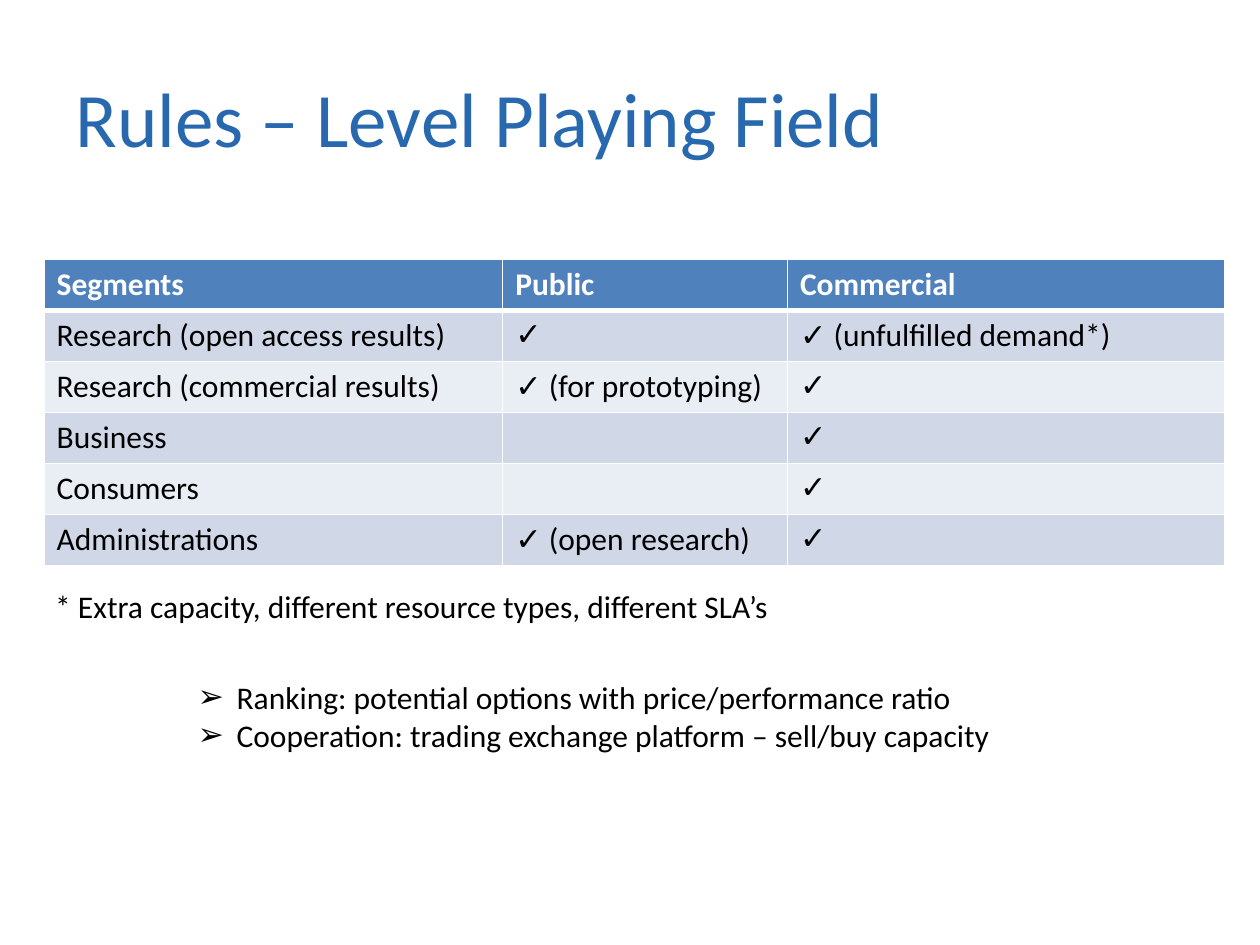
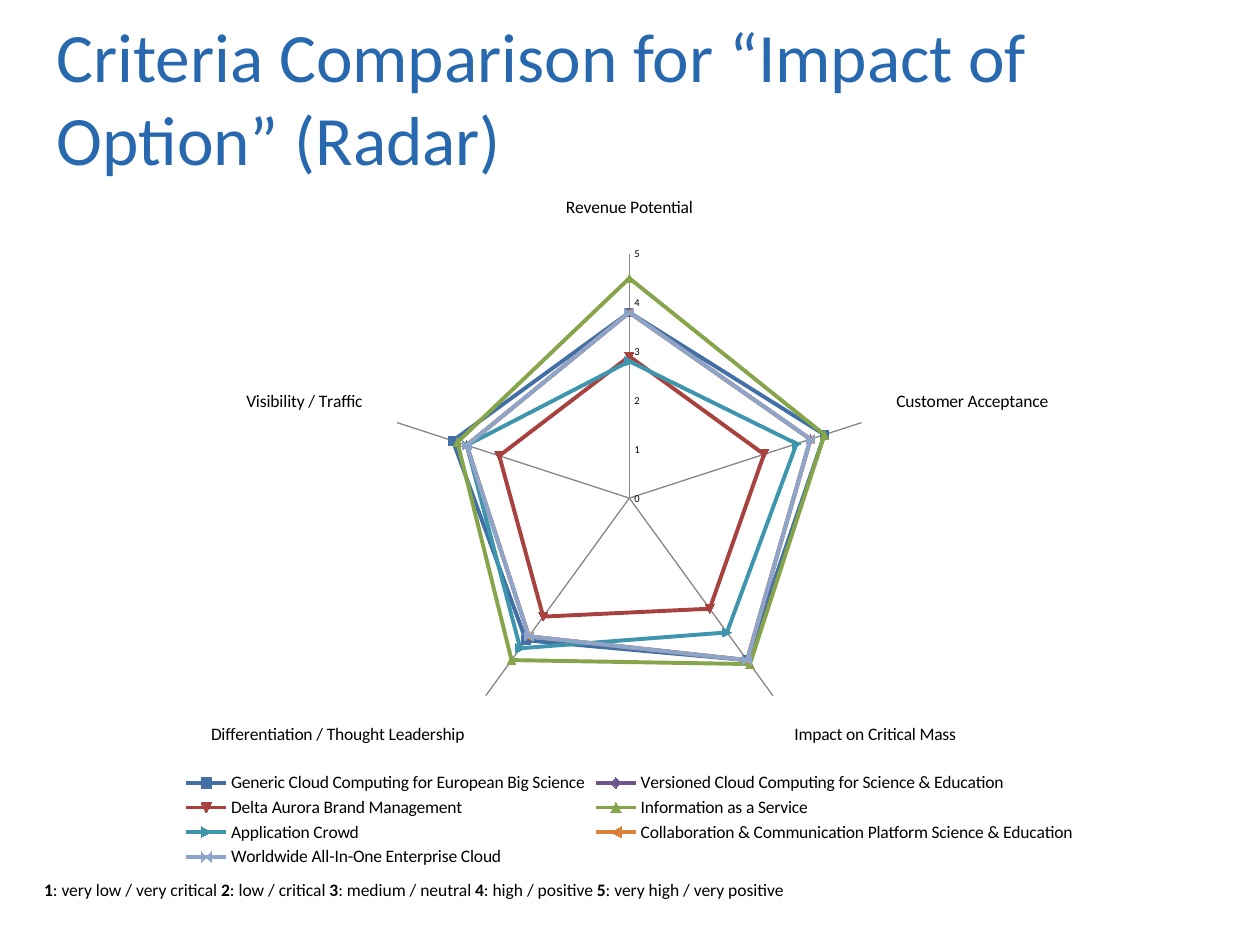
from lxml import etree
from pptx import Presentation
from pptx import util as u
from pptx.chart import data as cd
from pptx.dml import color as col
from pptx.enum import chart as ch
from pptx.enum import text as tx
from pptx.oxml import ns

FONT = "Calibri"
TICK = "✓"
HUES = {
    "title": "2768AE", "ink": "000000", "white": "FFFFFF", "head": "4F81BD",
    "odd": "D0D8E8", "even": "E9EDF4", "axis": "868686",
}
LINES = {
    "Generic Cloud Computing for European Big Science": ("416FA6", (3.8, 4.2, 4.1, 3.6, 3.8)),
    "Versioned Cloud Computing for Science & Education": ("6E548D", (3.8, 3.9, 4.1, 3.5, 3.5)),
    "Delta Aurora Brand Management": ("A8423F", (2.9, 2.9, 2.8, 3.0, 2.8)),
    "Information as a Service": ("86A44A", (4.5, 4.2, 4.2, 4.1, 3.7)),
    "Application Crowd": ("3D96AE", (2.8, 3.6, 3.4, 3.8, 3.5)),
    "Collaboration & Communication Platform Science & Education": ("DA8137", (3.8, 3.9, 4.1, 3.5, 3.5)),
    "Worldwide All-In-One Enterprise Cloud": ("8EA5CB", (3.8, 3.9, 4.1, 3.5, 3.5)),
}
AXES = ["Revenue Potential", "Customer Acceptance", "Impact on Critical Mass",
        "Differentiation / Thought Leadership", "Visibility / Traffic"]
ROWS = [
    ("Segments", "Public", "Commercial"),
    ("Research (open access results)", TICK, TICK + " (unfulfilled demand*)"),
    ("Research (commercial results)", TICK + " (for prototyping)", TICK),
    ("Business", "", TICK),
    ("Consumers", "", TICK),
    ("Administrations", TICK + " (open research)", TICK),
]
SCALE = ["very low / very critical ", "low / critical ", "medium / neutral ",
         "high / positive ", "very high / very positive"]


def rgb(hue):
    return col.RGBColor.from_string(HUES.get(hue, hue))


def style(font, size, hue="ink", bold=False, face=FONT):
    font.name, font.size, font.bold = face, u.Pt(size), bold
    font.color.rgb = rgb(hue)


def add_run(para, words, size, hue="ink", bold=False, face=FONT):
    run = para.add_run()
    run.text = words
    style(run.font, size, hue, bold, face)


def add_box(slide, area, wrap=True, anchor=tx.MSO_ANCHOR.TOP):
    frame = slide.shapes.add_textbox(*map(u.Inches, area)).text_frame
    frame.word_wrap = wrap
    frame.vertical_anchor = anchor
    if not wrap:
        frame.auto_size = tx.MSO_AUTO_SIZE.SHAPE_TO_FIT_TEXT
    return frame


def add_title(slide, words, area, size):
    frame = add_box(slide, area, anchor=tx.MSO_ANCHOR.MIDDLE)
    add_run(frame.paragraphs[0], words, size, "title")


def add_mark(para, sign, indent):
    props = para._p.get_or_add_pPr()
    props.set("marL", str(u.Inches(indent)))
    props.set("indent", str(-u.Inches(indent)))
    etree.SubElement(props, ns.qn("a:buFont"), typeface="Arial")
    etree.SubElement(props, ns.qn("a:buChar"), char=sign)


def add_edge(cell, side, width):
    line = etree.SubElement(cell._tc.get_or_add_tcPr(), ns.qn("a:ln" + side),
                            w=str(u.Pt(width)))
    fill = etree.SubElement(line, ns.qn("a:solidFill"))
    etree.SubElement(fill, ns.qn("a:srgbClr"), val=HUES["white"])


def fill_cell(cell, words, row):
    head = row == 0
    for side in "LRTB":
        thick = (head and side == "B") or (row == 1 and side == "T")
        add_edge(cell, side, 3 if thick else 1)
    cell.fill.solid()
    cell.fill.fore_color.rgb = rgb("head" if head else "odd" if row % 2 else "even")
    para = cell.text_frame.paragraphs[0]
    if words.startswith(TICK):
        add_run(para, TICK, 18, face="Arial")
        words = words[len(TICK):]
    if words:
        add_run(para, words, 18, "white" if head else "ink", head)


def add_grid(slide, rows, left, top, widths, height):
    area = (left, top, sum(widths), height * len(rows))
    table = slide.shapes.add_table(len(rows), len(widths), *map(u.Inches, area)).table
    for band, width in zip(table.columns, widths):
        band.width = u.Inches(width)
    for i, row in enumerate(rows):
        for j, words in enumerate(row):
            fill_cell(table.cell(i, j), words, i)


def add_radar(slide, area):
    data = cd.CategoryChartData(number_format="0.0")
    data.categories = AXES
    for name, (_, vals) in LINES.items():
        data.add_series(name, vals)
    chart = slide.shapes.add_chart(ch.XL_CHART_TYPE.RADAR_MARKERS,
                                   *map(u.Inches, area), data).chart
    style(chart.font, 18)
    chart.has_title = False
    chart.has_legend = True
    chart.legend.position = ch.XL_LEGEND_POSITION.BOTTOM
    chart.legend.include_in_layout = False
    style(chart.legend.font, 10)
    plot = chart.plots[0]
    plot.vary_by_categories = False
    for line, (hue, _) in zip(plot.series, LINES.values()):
        line.format.line.color.rgb = rgb(hue)
        line.format.line.width = u.Pt(2.25)
        mark = line.marker.format
        mark.fill.solid()
        mark.fill.fore_color.rgb = rgb(hue)
        mark.line.color.rgb = rgb(hue)
    for axis, size in ((chart.category_axis, 10), (chart.value_axis, 6)):
        style(axis.tick_labels.font, size)
        axis.major_tick_mark = axis.minor_tick_mark = ch.XL_TICK_MARK.NONE
        axis.format.line.color.rgb = rgb("axis")
    chart.category_axis.has_major_gridlines = True
    scale = chart.value_axis
    scale.has_major_gridlines = False
    scale.minimum_scale, scale.maximum_scale, scale.major_unit = 0, 5, 1
    scale.tick_labels.number_format = "0"
    scale.tick_labels.number_format_is_linked = False


def add_key(slide, area):
    frame = add_box(slide, area, anchor=tx.MSO_ANCHOR.BOTTOM)
    frame.margin_left = frame.margin_right = frame.margin_top = frame.margin_bottom = 0
    for rank, words in enumerate(SCALE, 1):
        add_run(frame.paragraphs[0], str(rank), 10, bold=True)
        add_run(frame.paragraphs[0], ": " + words, 10)


def make_rules(slide):
    add_title(slide, "Rules – Level Playing Field", (0.5, 0.3, 9, 1.25), 44)
    add_grid(slide, ROWS, 0.35, 2.06, (3.64, 2.26, 3.47), 0.405)
    frame = add_box(slide, (1.47, 5.33, 6.84, 0.71), wrap=False)
    points = ("Ranking: potential options with price/performance ratio",
              "Cooperation: trading exchange platform – sell/buy capacity")
    for i, words in enumerate(points):
        para = frame.add_paragraph() if i else frame.paragraphs[0]
        add_mark(para, "➢", 0.31)
        add_run(para, words, 18)
    note = add_box(slide, (0.34, 4.61, 6, 0.4), wrap=False)
    add_run(note.paragraphs[0],
            "* Extra capacity, different resource types, different SLA’s", 18)


def make_radar(slide):
    add_radar(slide, (0.35, 1.46, 9.29, 5.46))
    add_title(slide, "Criteria Comparison for “Impact of Option” (Radar)",
              (0.35, 0.35, 9.29, 0.83), 39.6)
    add_key(slide, (0.35, 6.97, 9.29, 0.17))


def main():
    deck = Presentation()
    deck.slide_width, deck.slide_height = u.Inches(10), u.Inches(7.5)
    for make in (make_rules, make_radar):
        make(deck.slides.add_slide(deck.slide_layouts[6]))
    deck.save("out.pptx")


if __name__ == "__main__":
    main()
